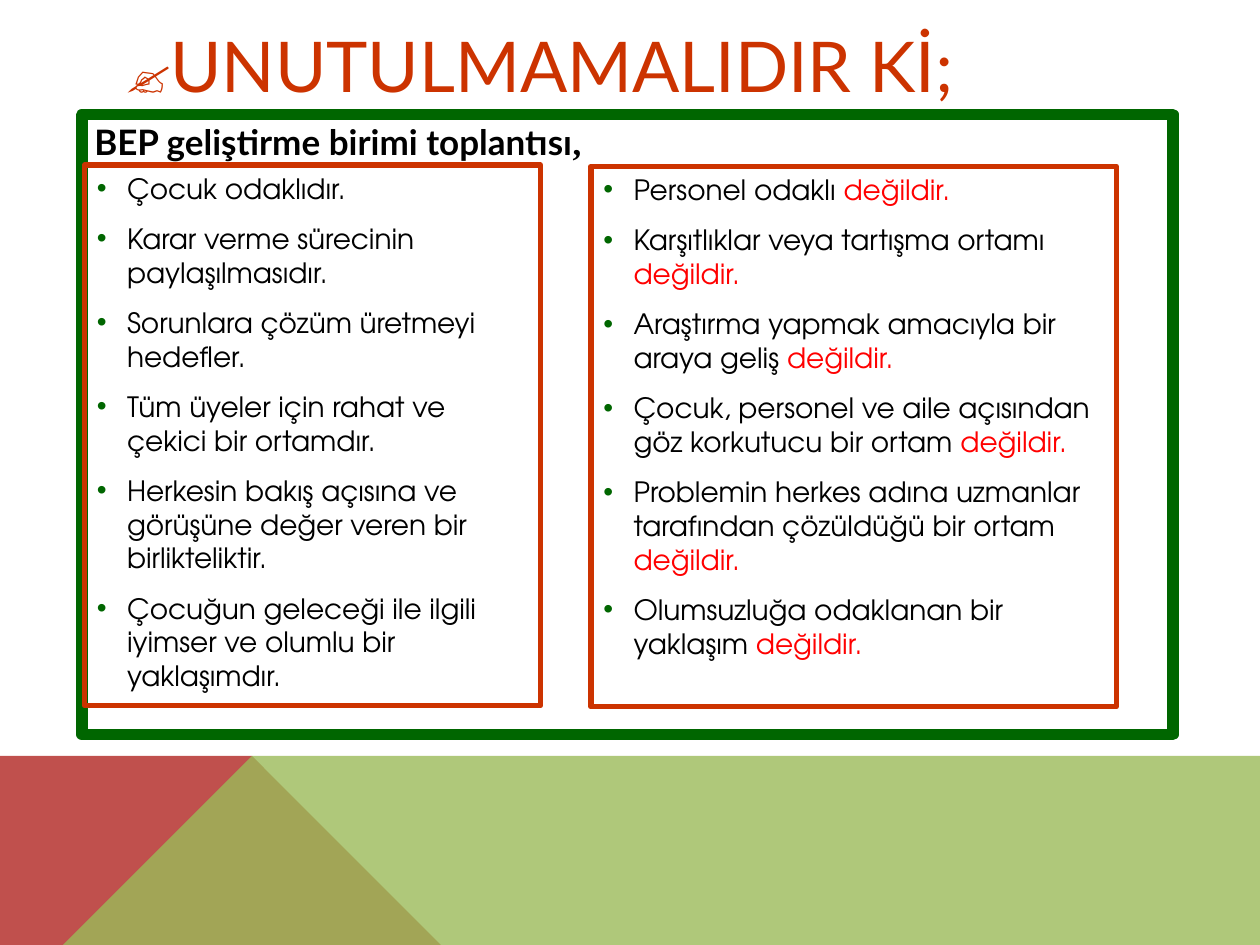
import pptx
import pptx.util
import pptx.dml.color
import pptx.enum.shapes
import pptx.enum.text
import pptx.oxml.ns
from lxml import etree

Inches = pptx.util.Inches
Pt = pptx.util.Pt
RGBColor = pptx.dml.color.RGBColor
Anchor = pptx.enum.text.MSO_ANCHOR
qn = pptx.oxml.ns.qn

BLACK = RGBColor(0, 0, 0)
RED = RGBColor(0xFF, 0, 0)
ORANGE = RGBColor(0xCC, 0x33, 0)
GREEN = RGBColor(0, 0x66, 0)
BRICK = RGBColor(0xC0, 0x50, 0x4D)
OLIVE = RGBColor(0x9B, 0xBB, 0x59)

HEAD = "Lato"
BODY = "TeX Gyre Adventor"
NOT = "değildir."

GOALS = [
    "Çocuk odaklıdır.",
    "Karar verme sürecinin paylaşılmasıdır.",
    "Sorunlara çözüm üretmeyi hedefler.",
    "Tüm üyeler için rahat ve çekici bir ortamdır.",
    "Herkesin bakış açısına ve görüşüne değer veren bir birlikteliktir.",
    "Çocuğun geleceği ile ilgili iyimser ve olumlu bir yaklaşımdır.",
]
LIMITS = [
    "Personel odaklı ",
    "Karşıtlıklar veya tartışma ortamı ",
    "Araştırma yapmak amacıyla bir araya geliş ",
    "Çocuk, personel ve aile açısından göz korkutucu bir ortam ",
    "Problemin herkes adına uzmanlar tarafından çözüldüğü bir ortam ",
    "Olumsuzluğa odaklanan bir yaklaşım ",
]


def add_run(para, text, font=BODY, size=16, color=BLACK, bold=False):
    run = para.add_run()
    run.text = text
    run.font.name = font
    run.font.size = Pt(size)
    run.font.color.rgb = color
    run.font.bold = bold


def add_area(slide, points, color, alpha=None):
    """Draw a filled outline, with alpha as its opacity in percent."""
    form = slide.shapes.build_freeform(*points[0], scale=Inches(1))
    form.add_line_segments(points[1:], close=True)
    shape = form.convert_to_shape()
    shape.shadow.inherit = False
    shape.line.fill.background()
    shape.fill.solid()
    shape.fill.fore_color.rgb = color
    if alpha is not None:
        tint = shape.fill._xPr.find(".//" + qn("a:srgbClr"))
        etree.SubElement(tint, qn("a:alpha"), val=str(alpha * 1000))


def add_frame(slide, left, top, width, height, color, weight):
    """Draw an unfilled box and return its text frame."""
    shape = slide.shapes.add_shape(
        pptx.enum.shapes.MSO_SHAPE.RECTANGLE,
        Inches(left), Inches(top), Inches(width), Inches(height))
    shape.shadow.inherit = False
    shape.fill.background()
    shape.line.color.rgb = color
    shape.line.width = Pt(weight)
    frame = shape.text_frame
    frame.word_wrap = True
    frame.vertical_anchor = Anchor.TOP
    frame.paragraphs[0].alignment = pptx.enum.text.PP_ALIGN.LEFT
    return frame


def set_bullet(para, color):
    props = para._p.get_or_add_pPr()
    props.set("marL", str(Inches(0.24)))
    props.set("indent", str(-Inches(0.24)))
    tint = etree.SubElement(props, qn("a:buClr"))
    etree.SubElement(tint, qn("a:srgbClr"), val=str(color))
    etree.SubElement(props, qn("a:buFont"), typeface="Arial")
    etree.SubElement(props, qn("a:buChar"), char="•")


def add_list(slide, left, top, width, items, ending=""):
    """Fill a frame with bullets, each closed by the ending in red."""
    frame = add_frame(slide, left, top, width, 4.29, ORANGE, 3)
    for index, item in enumerate(items):
        para = frame.add_paragraph() if index else frame.paragraphs[0]
        para.alignment = pptx.enum.text.PP_ALIGN.LEFT
        para.space_before = Pt(9.6 if index else 0)
        set_bullet(para, GREEN)
        add_run(para, item)
        if ending:
            add_run(para, ending, color=RED)


def add_title(slide):
    box = slide.shapes.add_textbox(
        Inches(0.9), Inches(0.21), Inches(8.23), Inches(0.6))
    frame = box.text_frame
    frame.word_wrap = True
    frame.vertical_anchor = Anchor.MIDDLE
    para = frame.paragraphs[0]
    add_run(para, "✍", font=HEAD, size=28, color=ORANGE, bold=True)
    add_run(para, "UNUTULMAMALIDIR Kİ;", font=HEAD, size=40, color=ORANGE)


def main():
    deck = pptx.Presentation()
    deck.slide_width = Inches(10)
    deck.slide_height = Inches(7.5)
    slide = deck.slides.add_slide(deck.slide_layouts[6])

    add_area(slide, [(0, 7.5), (0, 5.52), (2.23, 5.52), (3.91, 7.5)], BRICK)
    add_area(slide, [(0, 7.5), (2.23, 5.52), (10, 5.53), (10, 7.5)], OLIVE, 80)
    add_title(slide)

    para = add_frame(slide, 0.65, 0.91, 8.66, 4.92, GREEN, 6.5).paragraphs[0]
    add_run(para, "BEP geliştirme birimi toplantısı",
            font=HEAD, size=20, bold=True)
    add_run(para, ",", font="Times New Roman", size=20, bold=True)

    add_list(slide, 0.67, 1.31, 3.62, GOALS)
    add_list(slide, 4.69, 1.32, 4.17, LIMITS, NOT)
    deck.save("out.pptx")


if __name__ == "__main__":
    main()
